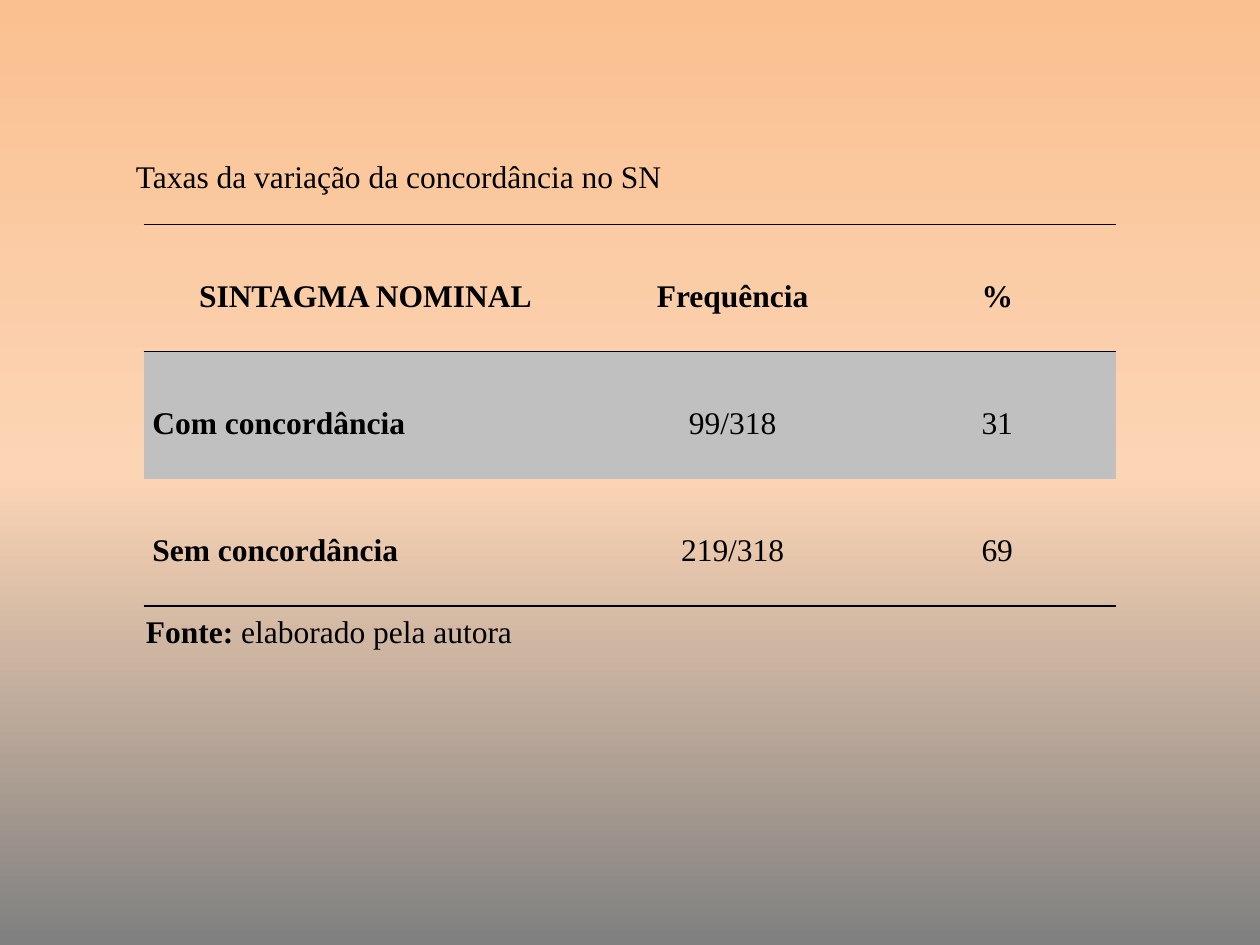
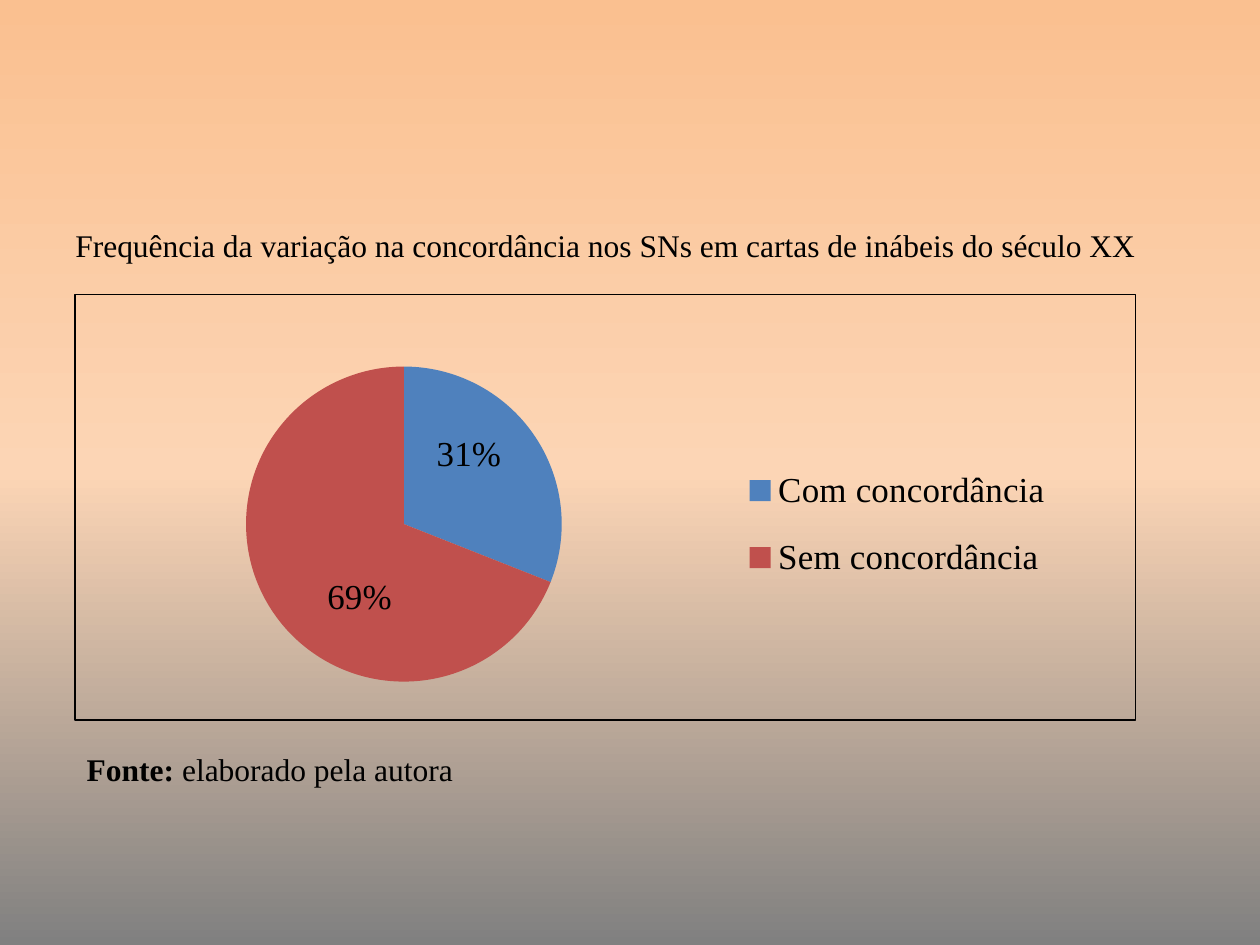
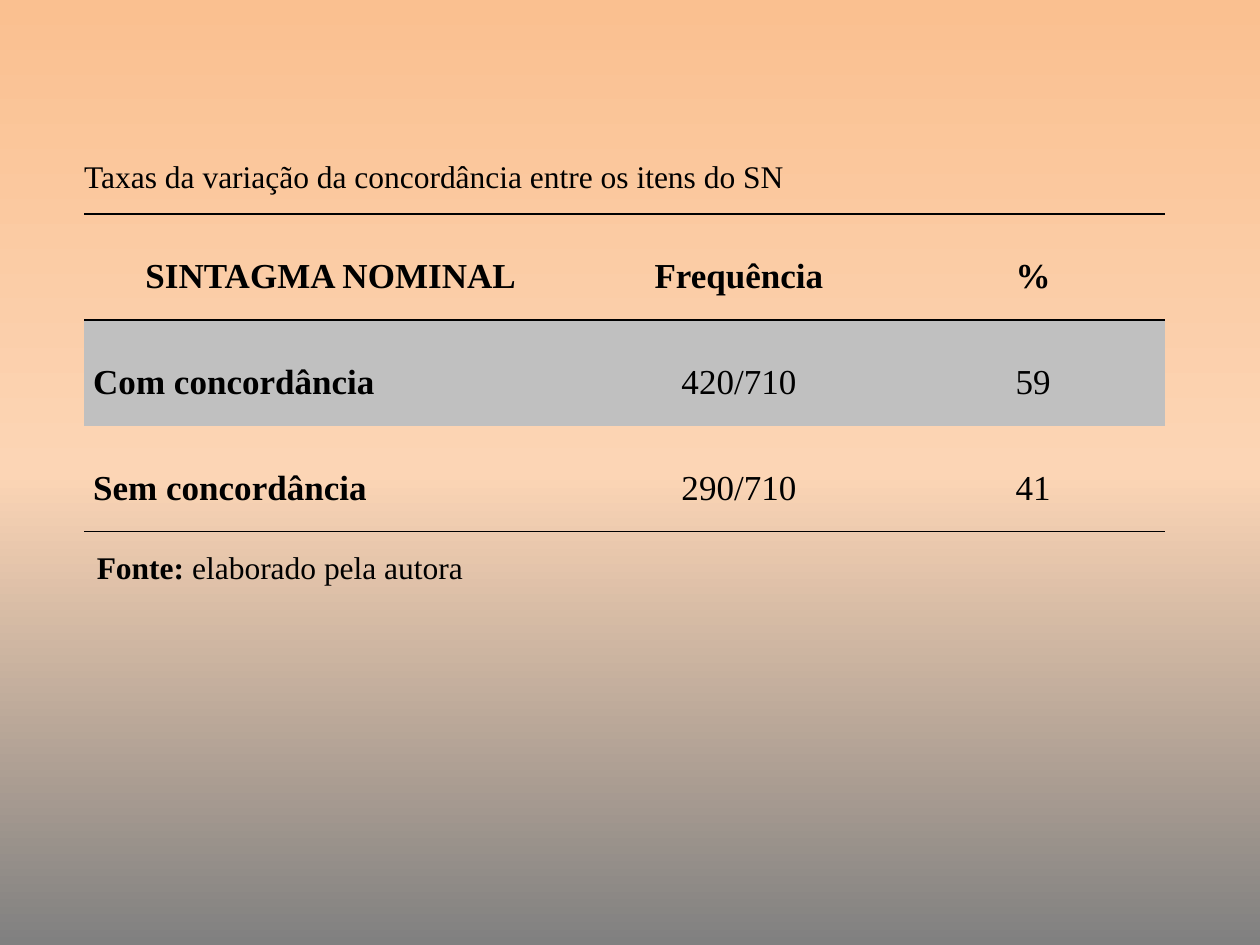
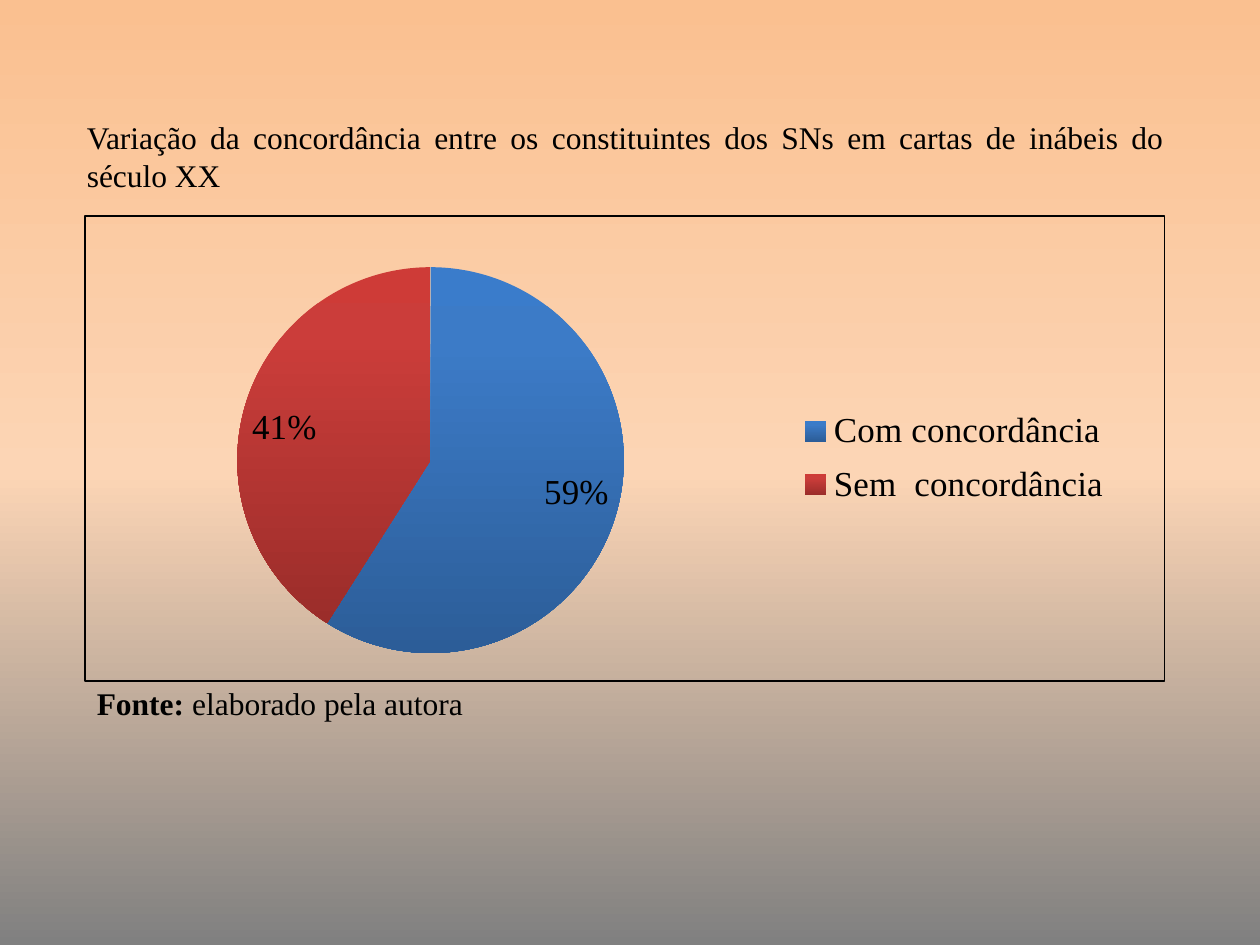
from copy import deepcopy

from lxml import etree
from pptx import Presentation
from pptx.chart.data import CategoryChartData
from pptx.dml.color import RGBColor
from pptx.enum.chart import XL_CHART_TYPE, XL_LABEL_POSITION, XL_LEGEND_POSITION
from pptx.enum.text import MSO_ANCHOR, PP_ALIGN
from pptx.oxml import parse_xml
from pptx.oxml.ns import nsdecls, qn
from pptx.util import Pt

PX = 9144
FONT = "Times New Roman"
BLACK = RGBColor(0x00, 0x00, 0x00)
SILVER = RGBColor(0xC0, 0xC0, 0xC0)
BLUE = RGBColor(0x4F, 0x81, 0xBD)
RED = RGBColor(0xC0, 0x50, 0x4D)
BACKGROUND = [
    (0, RGBColor(0xFA, 0xC0, 0x90)),
    (0.5, RGBColor(0xFC, 0xD5, 0xB5)),
    (1, RGBColor(0x80, 0x80, 0x80)),
]
BLUE_SHADES = [
    (0, RGBColor(0x3A, 0x7C, 0xCB)),
    (0.2, RGBColor(0x3C, 0x7B, 0xC7)),
    (1, RGBColor(0x2C, 0x5D, 0x98)),
]
RED_SHADES = [
    (0, RGBColor(0xCE, 0x3B, 0x37)),
    (0.2, RGBColor(0xCB, 0x3D, 0x3A)),
    (1, RGBColor(0x9B, 0x2D, 0x2A)),
]
NO_GRID_STYLE = "{2D5ABB26-0587-4C30-8999-92F81FD0307C}"
EDGES = ("a:lnL", "a:lnR", "a:lnT", "a:lnB")
RULED_EDGES = [("a:lnT", "a:lnB"), ("a:lnT",), ("a:lnB",)]
LEFT, CENTER, JUSTIFY = PP_ALIGN.LEFT, PP_ALIGN.CENTER, PP_ALIGN.JUSTIFY
MIDDLE, TOP = MSO_ANCHOR.MIDDLE, MSO_ANCHOR.TOP
PIE = XL_CHART_TYPE.PIE
RIGHT = XL_LEGEND_POSITION.RIGHT
LABEL_CENTER, LABEL_END = XL_LABEL_POSITION.CENTER, XL_LABEL_POSITION.INSIDE_END

HEADER = ("SINTAGMA NOMINAL", "Frequência", "%")
SOURCE = [("Fonte: ", True), ("elaborado pela autora", False)]
SOURCE_SIZE = (900, 54)

SLIDES = [
    {
        "title": "Taxas da variação da concordância no SN",
        "title_box": (98, 77, 821, 125),
        "source_at": (106, 481),
        "table": {
            "at": (114, 178), "cols": (352, 231, 189), "row": 101, "size": 18,
            "rows": [HEADER,
                     ("Com concordância", "99/318", "31"),
                     ("Sem concordância", "219/318", "69")],
        },
    },
    {
        "title": "Frequência da variação na concordância nos SNs em cartas de inábeis do século XX",
        "title_box": (50, 132, 900, 125),
        "source_at": (59, 590),
        "chart": {
            "box": (59, 233, 843, 339),
            "values": [("Com concordância", 31), ("Sem concordância", 69)],
            "plot": (0.09, 0.17, 0.44, 0.74), "legend": (0.63, 0.35, 0.29, 0.38),
            "colors": (BLUE, RED), "label_position": LABEL_CENTER,
            "label_shifts": [(0, -0.06), (0.02, 0.07)],
        },
    },
    {
        "title": "Taxas da variação da concordância entre os itens do SN",
        "title_box": (57, 77, 900, 125),
        "source_at": (67, 430),
        "table": {
            "at": (67, 170), "cols": (391, 257, 210), "row": 84, "size": 20,
            "rows": [HEADER,
                     ("Com concordância", "420/710", "59"),
                     ("Sem concordância", "290/710", "41")],
        },
    },
    {
        "title": "Variação da concordância entre os constituintes dos SNs em cartas de inábeis do século XX",
        "title_box": (59, 69, 875, 109),
        "source_at": (67, 538),
        "chart": {
            "box": (67, 171, 858, 370),
            "values": [("Com concordância", 59), ("Sem  concordância", 41)],
            "plot": (0.08, 0.11, 0.48, 0.83), "legend": (0.65, 0.39, 0.31, 0.26),
            "shades": (BLUE_SHADES, RED_SHADES), "label_position": LABEL_END,
        },
    },
]


def emu(lengths):
    return [n * PX for n in lengths]


def style_font(font, size, bold=False):
    font.name = FONT
    font.size = Pt(size)
    font.bold = bold
    font.color.rgb = BLACK


def fill_downward(fill, element, shades):
    fill.gradient()
    fill.gradient_angle = 270
    stops = element.find(".//" + qn("a:gsLst"))
    stops.append(deepcopy(stops[0]))
    for stop, (position, color) in zip(fill.gradient_stops, shades):
        stop.position = position
        stop.color.rgb = color


def add_text(s, box, runs, align, anchor, before=0):
    tf = s.shapes.add_textbox(*emu(box)).text_frame
    tf.word_wrap = True
    tf.vertical_anchor = anchor
    p = tf.paragraphs[0]
    p.alignment = align
    p.space_before = Pt(before)
    for text, bold in runs:
        r = p.add_run()
        r.text = text
        style_font(r.font, 18, bold)


def line_xml(tag, width):
    paint = f'<a:solidFill><a:srgbClr val="{BLACK}"/></a:solidFill>' if width else "<a:noFill/>"
    return parse_xml(f'<{tag} {nsdecls("a")} w="{Pt(width)}">{paint}</{tag}>')


def add_rule_table(s, spec):
    rows, cols = spec["rows"], spec["cols"]
    size = (sum(cols), spec["row"] * len(rows))
    table = s.shapes.add_table(len(rows), len(cols), *emu(spec["at"] + size)).table
    table.first_row = table.horz_banding = False
    table._tbl.tblPr.find(qn("a:tableStyleId")).text = NO_GRID_STYLE
    for column, width in zip(table.columns, cols):
        column.width = width * PX
    for i, row in enumerate(rows):
        table.rows[i].height = spec["row"] * PX
        for j, text in enumerate(row):
            cell = table.cell(i, j)
            cell.text = text
            cell.vertical_anchor = MIDDLE
            cell.margin_left = cell.margin_right = 7 * PX
            cell.margin_top = cell.margin_bottom = 0
            p = cell.text_frame.paragraphs[0]
            p.alignment = LEFT if i and j == 0 else CENTER
            p.line_spacing = 1.5
            style_font(p.runs[0].font, spec["size"], i == 0 or j == 0)
            if i == 1:
                cell.fill.solid()
                cell.fill.fore_color.rgb = SILVER
            else:
                cell.fill.background()
            for k, edge in enumerate(EDGES):
                cell._tc.tcPr.insert(k, line_xml(edge, 1 if edge in RULED_EDGES[i] else 0))


def layout_xml(inner=False, **parts):
    layout = parse_xml(f'<c:layout {nsdecls("c")}><c:manualLayout/></c:layout>')
    items = [("layoutTarget", "inner")] if inner else []
    if "w" in parts:
        items += [("xMode", "edge"), ("yMode", "edge")]
    for tag, value in items + list(parts.items()):
        etree.SubElement(layout[0], qn("c:" + tag)).set("val", str(value))
    return layout


def add_pie(s, spec):
    data = CategoryChartData()
    data.categories = [name for name, _ in spec["values"]]
    data.add_series("Series 1", [value for _, value in spec["values"]])
    chart = s.shapes.add_chart(PIE, *emu(spec["box"]), data).chart
    chart.has_title = False
    style_font(chart.font, 20)

    chart.has_legend = True
    chart.legend.position = RIGHT
    chart.legend.include_in_layout = False
    space = chart._chartSpace
    space.find(".//" + qn("c:legendPos")).addnext(layout_xml(**dict(zip("xywh", spec["legend"]))))
    area = space.find(".//" + qn("c:plotArea"))
    for old in area.findall(qn("c:layout")):
        area.remove(old)
    area.insert(0, layout_xml(True, **dict(zip("xywh", spec["plot"]))))
    frame = parse_xml(f'<c:spPr {nsdecls("c", "a")}><a:noFill/></c:spPr>')
    frame.append(line_xml("a:ln", 0.75))
    space.find(qn("c:chart")).addnext(frame)

    plot = chart.plots[0]
    plot.vary_by_categories = True
    series = plot.series[0]
    for i, color in enumerate(spec.get("colors", ())):
        fill = series.points[i].format.fill
        fill.solid()
        fill.fore_color.rgb = color
    for i, shades in enumerate(spec.get("shades", ())):
        fill = series.points[i].format.fill
        fill_downward(fill, series._element.findall(qn("c:dPt"))[i], shades)
    labels = series.data_labels
    labels.show_value = False
    labels.show_percentage = True
    labels.number_format = "0%"
    labels.number_format_is_linked = False
    labels.position = spec["label_position"]
    style_font(labels.font, 20)
    for i, (x, y) in enumerate(spec.get("label_shifts", ())):
        series.points[i].data_label.position = spec["label_position"]
        label = series._element.findall(".//" + qn("c:dLbl"))[i]
        label.find(qn("c:idx")).addnext(layout_xml(x=x, y=y))
        label.find(qn("c:showVal")).set("val", "0")
        label.find(qn("c:showPercent")).set("val", "1")


def main():
    prs = Presentation()
    prs.slide_width, prs.slide_height = emu((1000, 750))
    master = prs.slide_master
    fill_downward(master.background.fill, master.element, BACKGROUND)
    for spec in SLIDES:
        s = prs.slides.add_slide(prs.slide_layouts[6])
        add_text(s, spec["title_box"], [(spec["title"], False)], JUSTIFY, MIDDLE)
        if "table" in spec:
            add_rule_table(s, spec["table"])
        else:
            add_pie(s, spec["chart"])
        add_text(s, spec["source_at"] + SOURCE_SIZE, SOURCE, LEFT, TOP, 3.6)
    prs.save("out.pptx")


if __name__ == "__main__":
    main()
